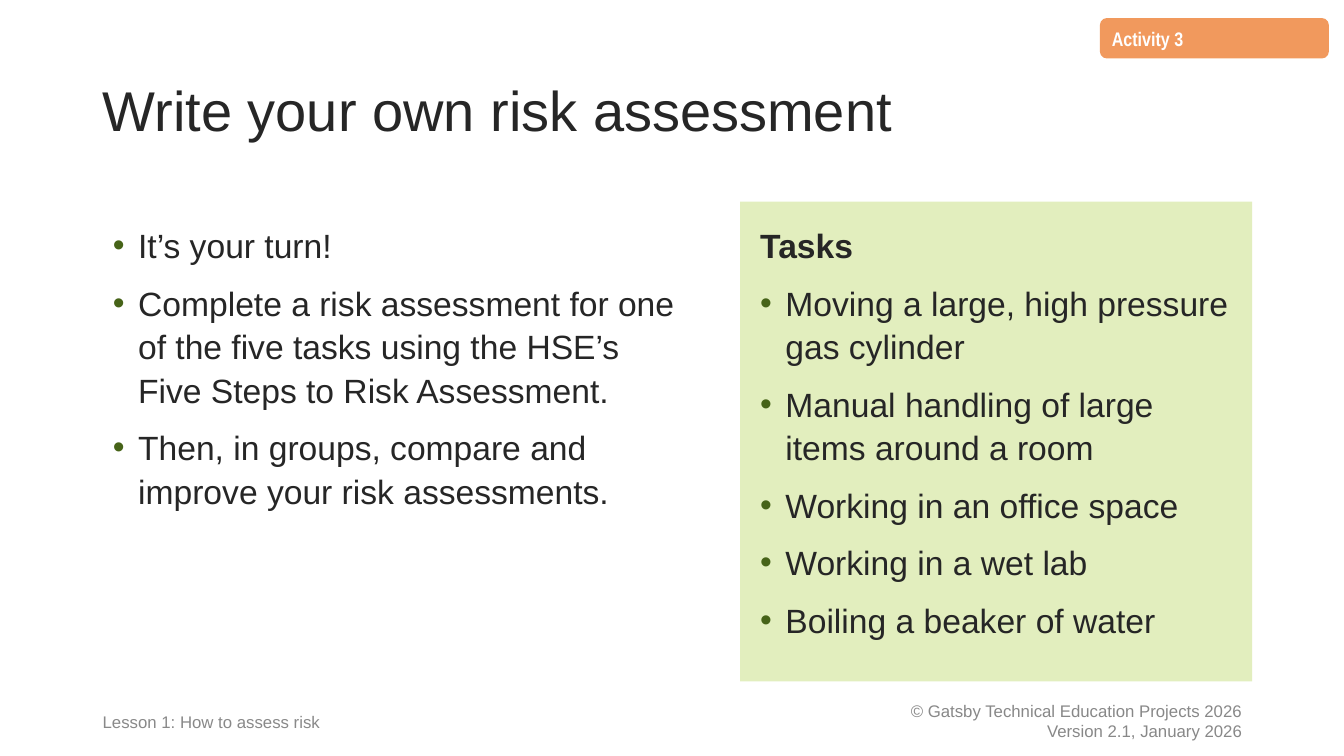
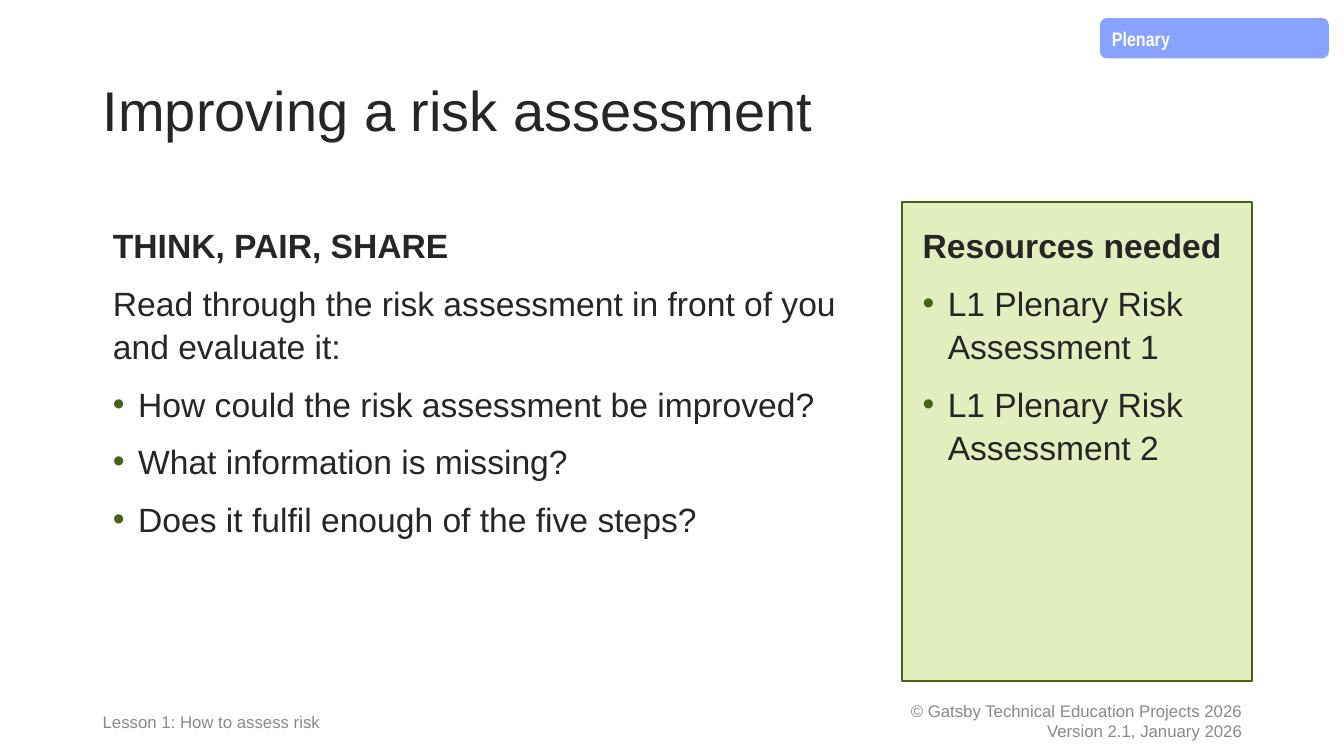
from lxml import etree
from pptx import Presentation
from pptx.dml.color import RGBColor
from pptx.enum import shapes, text
from pptx.oxml import ns
from pptx.util import Inches, Pt

INK = RGBColor(0x26, 0x26, 0x26)
GREY = RGBColor(0x88, 0x88, 0x88)
ASH = RGBColor(0x89, 0x89, 0x89)
WHITE = RGBColor(0xFF, 0xFF, 0xFF)
GREEN = RGBColor(0x46, 0x63, 0x18)
LIME = RGBColor(0xE2, 0xEE, 0xBE)
ORANGE = RGBColor(0xF1, 0x99, 0x5D)
BLUE = RGBColor(0x88, 0xA2, 0xFF)

LEFT, RIGHT = 0.92, 12.42
TOP, HIGH = 2, 4.76
FOOT, LINE = 6.95, 0.4


class Deck:
    def __init__(self):
        self.prs = Presentation()
        self.prs.slide_width = Inches(13.33)
        self.prs.slide_height = Inches(7.5)
        self.slide = None

    def start(self, title, tag, fill):
        """Add a slide with its title, corner tag and footers."""
        self.slide = self.prs.slides.add_slide(self.prs.slide_layouts[3])
        self.tag(tag, fill)
        self.title(title)
        self.note(LEFT, 4.6, ["Lesson 1: How to assess risk"], ASH, space=1.08)
        self.note(7.92, RIGHT - 7.92,
                  ["© Gatsby Technical Education Projects 2026",
                   "Version 2.1, January 2026"],
                  GREY, text.PP_ALIGN.RIGHT)

    def place(self, shape, x, y, w, h):
        shape.left, shape.top = Inches(x), Inches(y)
        shape.width, shape.height = Inches(w), Inches(h)

    def frame(self, shape, anchor, side=0.1, edge=0.05):
        """Set up the text frame of a shape and return it."""
        tf = shape.text_frame
        tf.word_wrap = True
        tf.auto_size = text.MSO_AUTO_SIZE.NONE
        tf.vertical_anchor = anchor
        tf.margin_left = tf.margin_right = Inches(side)
        tf.margin_top = tf.margin_bottom = Inches(edge)
        return tf

    def style(self, para, size, color, bold=False, face="Arial",
              space=1.08, before=0, align=text.PP_ALIGN.LEFT):
        para.alignment = align
        para.line_spacing = space
        para.space_before = Pt(before)
        font = para.font
        font.name, font.size, font.bold = face, Pt(size), bold
        font.color.rgb = color

    def fill(self, tf, lines):
        """Write one paragraph per line, yielding each for styling."""
        for i, line in enumerate(lines):
            para = tf.add_paragraph() if i else tf.paragraphs[0]
            para.text = line
            yield i, para

    def tag(self, label, color):
        box = self.slide.shapes.add_shape(
            shapes.MSO_SHAPE.FLOWCHART_ALTERNATE_PROCESS,
            Inches(10.91), Inches(0.18), Inches(2.27), Inches(LINE))
        box.shadow.inherit = False
        box.fill.solid()
        box.fill.fore_color.rgb = color
        box.line.fill.background()
        tf = self.frame(box, text.MSO_ANCHOR.TOP)
        tf.text = label
        self.style(tf.paragraphs[0], 14, WHITE, True, "Arial Narrow")

    def title(self, words):
        box = self.slide.shapes.title
        self.place(box, LEFT, 0.4, 11.5, 1.45)
        tf = self.frame(box, text.MSO_ANCHOR.MIDDLE)
        tf.text = words
        self.style(tf.paragraphs[0], 40, INK, space=0.9)

    def note(self, x, w, lines, color, align=text.PP_ALIGN.LEFT, space=1.0):
        box = self.slide.shapes.add_textbox(
            Inches(x), Inches(FOOT), Inches(w), Inches(LINE))
        tf = self.frame(box, text.MSO_ANCHOR.MIDDLE)
        for _, para in self.fill(tf, lines):
            self.style(para, 12, color, space=space, align=align)

    def bullet(self, para, on):
        props = para._p.get_or_add_pPr()
        step = Inches(0.25) if on else 0
        props.set("marL", str(step))
        props.set("indent", str(-step))
        if not on:
            etree.SubElement(props, ns.qn("a:buNone"))
            return
        tint = etree.SubElement(props, ns.qn("a:buClr"))
        etree.SubElement(tint, ns.qn("a:srgbClr"), val=str(GREEN))
        etree.SubElement(props, ns.qn("a:buFont"), typeface="Arial")
        etree.SubElement(props, ns.qn("a:buChar"), char="•")

    def panel(self, idx, x, end, color, items, head=None, lead=None,
              rim=None):
        """Fill a body placeholder: bold head, plain lead, then bullets."""
        box = self.slide.placeholders[idx]
        self.place(box, x, TOP, end - x, HIGH)
        box.fill.solid()
        box.fill.fore_color.rgb = color
        if rim:
            box.line.color.rgb = rim
            box.line.width = Pt(1.5)
        tf = self.frame(box, text.MSO_ANCHOR.TOP, 0.2, 0.2)
        plain = [line for line in (head, lead) if line]
        for i, para in self.fill(tf, plain + items):
            self.bullet(para, i >= len(plain))
            self.style(para, 24, INK, bool(head) and i == 0,
                       before=10 if i else 0)


def main():
    deck = Deck()

    deck.start("Write your own risk assessment", "Activity 3", ORANGE)
    deck.panel(1, LEFT, 7.01, WHITE, [
        "It’s your turn!",
        "Complete a risk assessment for one of the five tasks using "
        "the HSE’s Five Steps to Risk Assessment.",
        "Then, in groups, compare and improve your risk assessments.",
    ])
    deck.panel(2, 7.34, RIGHT, LIME, [
        "Moving a large, high pressure gas cylinder",
        "Manual handling of large items around a room",
        "Working in an office space",
        "Working in a wet lab",
        "Boiling a beaker of water",
    ], head="Tasks")

    deck.start("Improving a risk assessment", "Plenary", BLUE)
    deck.panel(1, LEFT, 8.67, WHITE, [
        "How could the risk assessment be improved?",
        "What information is missing?",
        "Does it fulfil enough of the five steps?",
    ], head="THINK, PAIR, SHARE",
        lead="Read through the risk assessment in front of you "
             "and evaluate it:")
    deck.panel(2, 8.95, RIGHT, LIME, [
        "L1 Plenary Risk Assessment 1",
        "L1 Plenary Risk Assessment 2",
    ], head="Resources needed", rim=GREEN)

    deck.prs.save("out.pptx")


if __name__ == "__main__":
    main()
